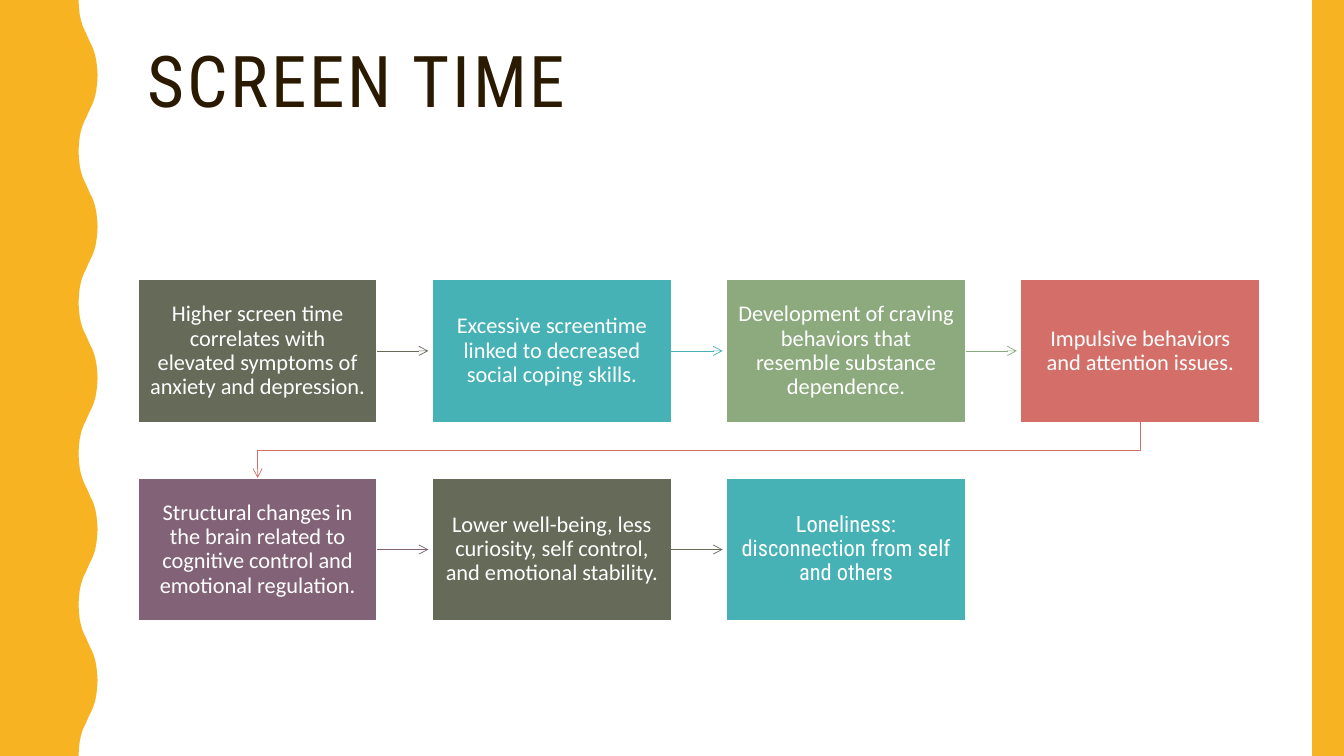
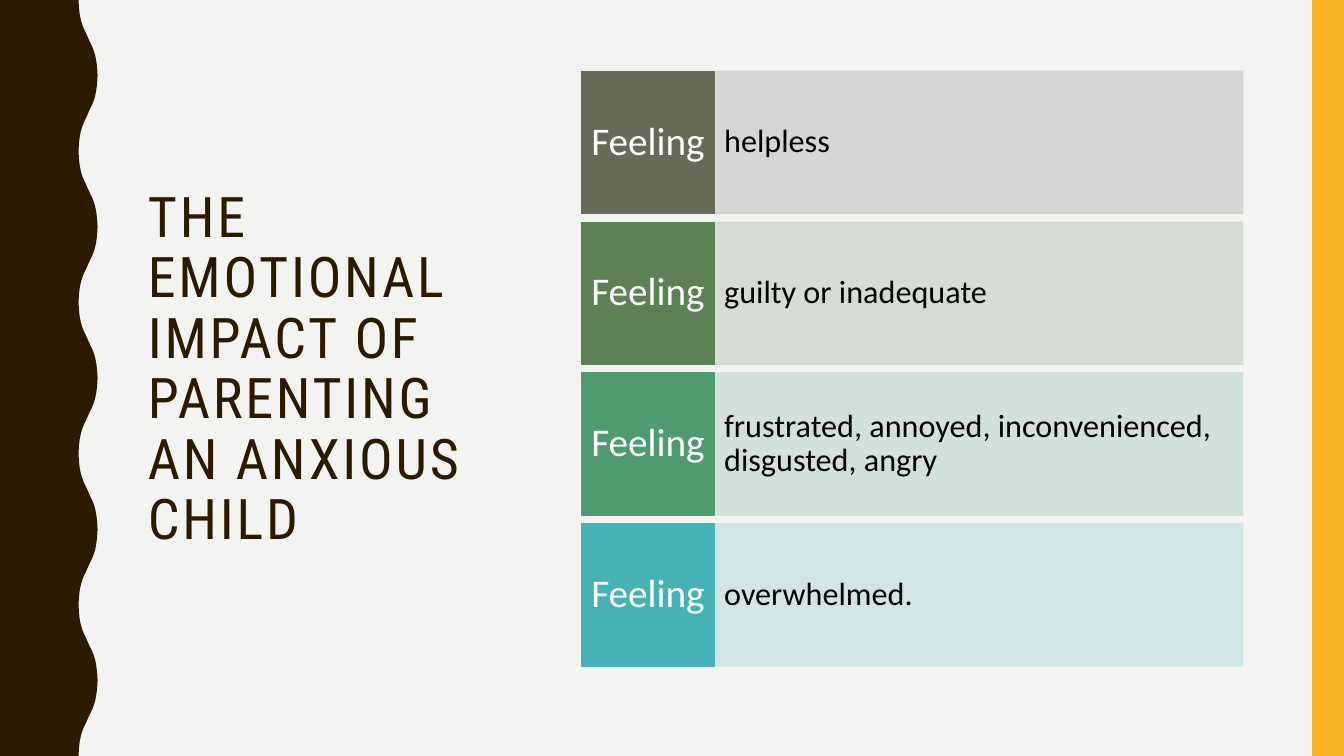
from itertools import pairwise

from lxml.etree import SubElement
from pptx import Presentation
from pptx.dml.color import RGBColor
from pptx.enum.shapes import MSO_CONNECTOR as Connector, MSO_SHAPE as Shape
from pptx.enum.text import MSO_ANCHOR as Anchor, PP_ALIGN as Align
from pptx.oxml.ns import qn
from pptx.util import Cm, Pt

COLORS = {
    "white": "FFFFFF", "black": "000000", "paper": "F3F3F2",
    "brown": "2A1A00", "amber": "F8B323",
    "olive": "656A59", "teal": "46B2B5", "sage": "8CAA7E",
    "coral": "D36F68", "plum": "826276", "green": "5B8155", "jade": "4F9A70",
    "pale olive": "D3D4D1", "pale green": "D1DAD0",
    "pale jade": "CFE0D7", "pale teal": "CFE4E5",
}
HEADING, BODY = "Roboto Condensed", "Calibri"
WIDTH, HEIGHT = 33.87, 19.05  # all plain lengths are centimetres

# Left edge of the wavy band: (down, across) points of a quarter wave
TROUGH, SWING, PERIOD = 1.98, 0.48, HEIGHT / 5
QUARTER = [(0, 0), (0.18, 0.01), (0.36, 0.03), (0.51, 0.06),
           (0.64, 0.1), (0.74, 0.14), (0.84, 0.19)]

STEPS = [
    ("Higher screen time correlates with elevated symptoms of anxiety and depression.", "olive", BODY),
    ("Excessive screentime linked to decreased social coping skills.", "teal", BODY),
    ("Development of craving behaviors that resemble substance dependence.", "sage", BODY),
    ("Impulsive behaviors and attention issues.", "coral", BODY),
    ("Structural changes in the brain related to cognitive control and emotional regulation.", "plum", BODY),
    ("Lower well-being, less curiosity, self control, and emotional stability.", "olive", BODY),
    ("Loneliness: disconnection from self and others", "teal", HEADING),
]
FEELINGS = [
    ("helpless", "olive", "pale olive"),
    ("guilty or inadequate", "green", "pale green"),
    ("frustrated, annoyed, inconvenienced, disgusted, angry", "jade", "pale jade"),
    ("overwhelmed.", "teal", "pale teal"),
]


def rgb(name):
    return RGBColor.from_string(COLORS[name])


def paint(shape, fill, line=None, line_width=1):
    shape.shadow.inherit = False
    shape.fill.solid()
    shape.fill.fore_color.rgb = rgb(fill)
    if line:
        shape.line.color.rgb = rgb(line)
        shape.line.width = Pt(line_width)
    else:
        shape.line.fill.background()


def add_rectangle(slide, box, fill, line=None):
    shape = slide.shapes.add_shape(Shape.RECTANGLE, *map(Cm, box))
    paint(shape, fill, line)
    return shape


def write(shape, text, *, size, color="white", font=BODY, align=Align.LEFT,
          margins=(0.25, 0.13), tracking=0):
    """Put one formatted paragraph into a shape, centred vertically."""
    frame = shape.text_frame
    frame.word_wrap = True
    frame.vertical_anchor = Anchor.MIDDLE
    frame.margin_left = frame.margin_right = Cm(margins[0])
    frame.margin_top = frame.margin_bottom = Cm(margins[1])
    paragraph = frame.paragraphs[0]
    paragraph.alignment = align
    paragraph.line_spacing = 0.9
    run = paragraph.add_run()
    run.text = text
    run.font.name = font
    run.font.size = Pt(size)
    run.font.color.rgb = rgb(color)
    if tracking:
        run.font._element.set("spc", str(tracking * 100))


def set_opacity(shape, percent):
    for color in shape._element.spPr.iter(qn("a:srgbClr")):
        SubElement(color, qn("a:alpha"), val=str(percent * 1000))


def add_wave_band(slide, color):
    rising = QUARTER + [(PERIOD / 4, SWING / 2)]
    rising += [(PERIOD / 2 - down, SWING - across) for down, across in reversed(QUARTER)]
    wave = rising + [(PERIOD - down, across) for down, across in reversed(rising[:-1])]
    edge = [(Cm(TROUGH + across), Cm(number * PERIOD + down))
            for number in range(5) for down, across in wave]
    builder = slide.shapes.build_freeform(0, 0)
    builder.add_line_segments(edge + [(0, Cm(HEIGHT))], close=True)
    paint(builder.convert_to_shape(), color)


def add_base_slide(presentation, background, band):
    """Blank slide with the wavy left band and the amber right band."""
    slide = presentation.slides.add_slide(presentation.slide_layouts[6])
    slide.background.fill.solid()
    slide.background.fill.fore_color.rgb = rgb(background)
    add_wave_band(slide, band)
    add_rectangle(slide, (WIDTH - 0.8, 0, 0.8, HEIGHT), "amber")
    return slide


def add_title(slide, text, box, size):
    title = slide.shapes.add_textbox(*map(Cm, box))
    write(title, text, size=size, color="brown", font=HEADING, tracking=2)


def style_arrow(connector, color):
    connector.line.color.rgb = rgb(color)
    connector.line.width = Pt(0.5)
    SubElement(connector.line._get_or_add_ln(), qn("a:tailEnd"), type="arrow")
    SubElement(connector._element.spPr, qn("a:effectLst"))


def add_side_arrow(slide, start, end, color):
    middle = start.top + start.height // 2
    connector = slide.shapes.add_connector(
        Connector.STRAIGHT, start.left + start.width, middle, end.left - Cm(0.1), middle)
    connector.begin_connect(start, 3)
    style_arrow(connector, color)


def add_return_arrow(slide, start, end, color):
    """Elbow from the bottom of one box back to the top of a lower one."""
    connector = slide.shapes.add_connector(Connector.ELBOW, 0, 0, 0, 0)
    connector.begin_connect(start, 2)
    connector.end_connect(end, 0)
    left, top, width, height = connector.left, connector.top, connector.width, connector.height
    # A quarter turn makes the elbow leave and arrive vertically
    frame = connector._element.spPr.xfrm
    frame.flipH = frame.flipV = False
    frame.set("rot", "5400000")
    connector.left = left + (width - height) // 2
    connector.top = top + (height - width) // 2
    connector.width, connector.height = height, width
    style_arrow(connector, color)


def add_flow(slide, box, columns=4, gap_x=1.39, gap_y=1.4):
    left, top, width, height = box
    cell_width = (width - (columns - 1) * gap_x) / columns
    cell_height = (height - gap_y) / 2
    cells = []
    for index, (text, color, font) in enumerate(STEPS):
        row, column = divmod(index, columns)
        cell = add_rectangle(slide, (left + column * (cell_width + gap_x),
                                     top + row * (cell_height + gap_y),
                                     cell_width, cell_height), color, "white")
        write(cell, text, size=16, font=font, align=Align.CENTER, margins=(0.27, 0.3))
        cells.append((cell, color))
    for (start, color), (end, _) in pairwise(cells):
        add_arrow = add_side_arrow if start.top == end.top else add_return_arrow
        add_arrow(slide, start, end, color)


def add_feelings(slide, box, label_width=3.34, gap=0.22):
    left, top, width, height = box
    row_height = (height - (len(FEELINGS) - 1) * gap) / len(FEELINGS)
    for index, (text, color, pale) in enumerate(FEELINGS):
        row_top = top + index * (row_height + gap)
        detail = add_rectangle(slide, (left + label_width, row_top, width - label_width, row_height),
                               pale, pale)
        set_opacity(detail, 90)
        write(detail, text, size=23, color="black", margins=(0.25, 0.9))
        label = add_rectangle(slide, (left, row_top, label_width, row_height), color, color)
        write(label, "Feeling", size=28, align=Align.CENTER, margins=(0.18, 0.36))


def build_screen_time(presentation):
    slide = add_base_slide(presentation, "white", "amber")
    add_title(slide, "SCREEN TIME", (3.48, 1.07, 28.27, 2.1), 51)
    add_flow(slide, (3.48, 7.04, 28.27, 8.61))


def build_emotional_impact(presentation):
    slide = add_base_slide(presentation, "paper", "brown")
    add_title(slide, "THE EMOTIONAL IMPACT OF PARENTING AN ANXIOUS CHILD",
              (3.48, 1.8, 9.4, 15.06), 40)
    add_feelings(slide, (14.66, 1.8, 16.66, 14.98))


def main():
    presentation = Presentation()
    presentation.slide_width, presentation.slide_height = Cm(WIDTH), Cm(HEIGHT)
    build_screen_time(presentation)
    build_emotional_impact(presentation)
    presentation.save("out.pptx")


if __name__ == "__main__":
    main()
